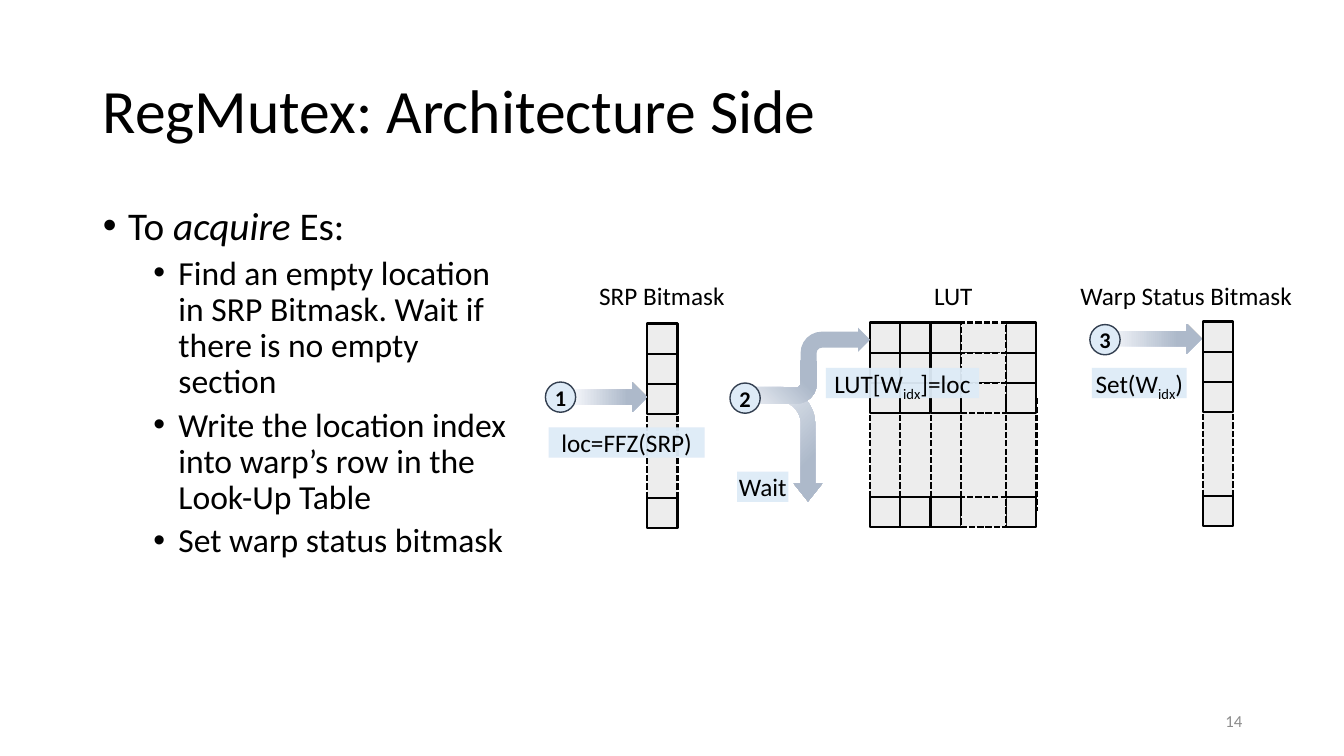
from lxml import etree
from pptx import Presentation
from pptx.dml.color import RGBColor
from pptx.enum import dml, shapes, text
from pptx.oxml.ns import qn
from pptx.util import Inches, Pt

FONT = "Calibri"
BLACK = RGBColor(0x00, 0x00, 0x00)
GRAY = RGBColor(0x8C, 0x8C, 0x8C)
CELL_FILL = RGBColor(0xED, 0xED, 0xED)
ARROW_LIGHT = RGBColor(0xF6, 0xF8, 0xFC)
ARROW_DARK = RGBColor(0xAD, 0xB9, 0xCA)
LABEL_FILL = RGBColor(0xDE, 0xEB, 0xF7)
STEP_LINE = RGBColor(0x33, 0x3F, 0x50)
SHAPE = shapes.MSO_SHAPE
CELL = 0.3
CELL_OFFSETS = (0, 0.3, 0.6, 1.73)


def inches(box):
    """Convert a box in inches to lengths."""
    return [Inches(v) for v in box]


def style(p, size, color=BLACK, align=text.PP_ALIGN.CENTER, bold=False):
    """Format a whole paragraph."""
    p.alignment = align
    p.font.name, p.font.size, p.font.bold = FONT, Pt(size), bold
    p.font.color.rgb = color


def add_runs(p, parts, mark):
    """Add text parts, passing every second run to mark."""
    for i, part in enumerate(parts):
        r = p.add_run()
        r.text = part
        if i % 2:
            mark(r)


def subscript(r):
    """Lower a run below the baseline."""
    r._r.get_or_add_rPr().set("baseline", "-25000")


def italic(r):
    """Set a run in italics."""
    r.font.italic = True


def add_shape(s, kind, box, fill):
    """Add a filled shape without shadow or outline."""
    sp = s.shapes.add_shape(kind, *inches(box))
    sp.shadow.inherit = False
    sp.line.fill.background()
    sp.fill.solid()
    sp.fill.fore_color.rgb = fill
    return sp


def outline(line, width, color=BLACK, dashed=False):
    """Set the colour, width and dash of a line."""
    line.color.rgb = color
    line.width = Pt(width)
    if dashed:
        line.dash_style = dml.MSO_LINE.SQUARE_DOT


def add_text(sp, parts, size, **kwargs):
    """Write one paragraph into a shape without margins."""
    tf = sp.text_frame
    tf.word_wrap = True
    tf.margin_left = tf.margin_right = tf.margin_top = tf.margin_bottom = 0
    p = tf.paragraphs[0]
    style(p, size, **kwargs)
    add_runs(p, parts, subscript)
    return tf


def add_title(s, box, title):
    """Fill the title placeholder."""
    sp = s.shapes.title
    sp.left, sp.top, sp.width, sp.height = inches(box)
    tf = sp.text_frame
    tf.text = title
    tf.vertical_anchor = text.MSO_ANCHOR.MIDDLE
    style(tf.paragraphs[0], 44, align=text.PP_ALIGN.LEFT)
    tf.paragraphs[0].line_spacing = 0.9


def add_bullets(s, box, items):
    """Fill the body placeholder with a two-level list."""
    sp = s.placeholders[1]
    sp.left, sp.top, sp.width, sp.height = inches(box)
    tf = sp.text_frame
    tf.auto_size = text.MSO_AUTO_SIZE.NONE
    for i, (level, parts) in enumerate(items):
        p = tf.add_paragraph() if i else tf.paragraphs[0]
        p.level = level
        style(p, 24 if level else 28, align=text.PP_ALIGN.LEFT)
        p.line_spacing = 0.9
        p.space_before = Pt(5 if level else 10)
        add_runs(p, parts, italic)
        pPr = p._p.get_or_add_pPr()
        pPr.set("marL", str(Inches(0.25 + 0.5 * level)))
        pPr.set("indent", str(Inches(-0.25)))
        bullet_font = etree.Element(qn("a:buFont"), typeface="Arial")
        bullet = etree.Element(qn("a:buChar"), char="•")
        at = pPr.index(pPr.find(qn("a:defRPr")))
        pPr[at:at] = [bullet_font, bullet]


def add_page_number(s, box, number):
    """Add the page number at the lower right."""
    tf = s.shapes.add_textbox(*inches(box)).text_frame
    tf.word_wrap = True
    tf.vertical_anchor = text.MSO_ANCHOR.MIDDLE
    tf.text = number
    style(tf.paragraphs[0], 12, GRAY, text.PP_ALIGN.RIGHT)


def add_column(s, x, y, width=CELL, dashed=False):
    """Draw a column of cells with an elided middle."""
    add_shape(s, SHAPE.RECTANGLE, (x, y + 0.75, width, 1.02), CELL_FILL)
    for dy in CELL_OFFSETS:
        cell = add_shape(s, SHAPE.RECTANGLE, (x, y + dy, width, CELL), CELL_FILL)
        outline(cell.line, 1.5, dashed=dashed)


def add_sides(s, x, y, offsets):
    """Draw the dashed sides of the elided middle."""
    for dx in offsets:
        ends = inches((x + dx, y + 0.75, x + dx, y + 1.87))
        side = s.shapes.add_connector(shapes.MSO_CONNECTOR.STRAIGHT, *ends)
        outline(side.line, 1.5, dashed=True)
        etree.SubElement(side._element.spPr, qn("a:effectLst"))


def add_bitmask(s, x, y):
    """Draw a bitmask of one column."""
    add_column(s, x, y)
    add_sides(s, x, y, (0, CELL))


def add_lut(s, x, y):
    """Draw the look-up table, with its elided column on top."""
    for dx in (0, 0.3, 0.6, 1.35):
        add_column(s, x + dx, y)
    add_column(s, x + 0.9, y, 0.45, dashed=True)
    add_sides(s, x, y, (0, 0.3, 0.6, 0.9, 1.35, 1.65))


def add_heading(s, box, heading):
    """Add a heading above a structure."""
    add_text(s.shapes.add_textbox(*inches(box)), [heading], 18)


def add_arrow(s, kind, box, angle=None, rotation=0, adjust=()):
    """Add a block arrow, shaded along the angle if one is given."""
    sp = add_shape(s, kind, box, ARROW_DARK)
    sp.rotation = rotation
    for i, value in enumerate(adjust):
        sp.adjustments[i] = value
    if angle is not None:
        sp.fill.gradient()
        sp.fill.gradient_angle = angle
        stops = zip(sp.fill.gradient_stops, (0, 0.74), (ARROW_LIGHT, ARROW_DARK))
        for stop, position, color in stops:
            stop.position = position
            stop.color.rgb = color


def add_step(s, x, y, number):
    """Add a numbered step circle."""
    sp = add_shape(s, SHAPE.OVAL, (x, y, CELL, CELL), LABEL_FILL)
    outline(sp.line, 1, STEP_LINE)
    tf = add_text(sp, [number], 16, bold=True)
    tf.vertical_anchor = text.MSO_ANCHOR.MIDDLE


def add_label(s, box, parts):
    """Add a slightly transparent operation label."""
    sp = add_shape(s, SHAPE.RECTANGLE, box, LABEL_FILL)
    color = sp._element.spPr.find(qn("a:solidFill"))[0]
    etree.SubElement(color, qn("a:alpha"), val="95000")
    add_text(sp, parts, 18).vertical_anchor = text.MSO_ANCHOR.TOP


def add_diagram(s, x, y):
    """Draw the bitmasks, the look-up table and the three steps."""
    bent = SHAPE.BENT_ARROW
    add_arrow(s, bent, (x + 1.75, y + 1.2, 1.14, 0.85), 45, 90,
              (0.166, 0.166, 0.208, 0.438))
    add_bitmask(s, x + 1.01, y + 0.43)
    add_bitmask(s, x + 6.52, y + 0.41)
    add_lut(s, x + 3.22, y + 0.42)
    for dx, width, heading in ((0.12, 2.07, "SRP Bitmask"), (3.58, 0.93, "LUT"),
                               (5.15, 2.41, "Warp Status Bitmask")):
        add_heading(s, (x + dx, y, width, CELL), heading)
    add_arrow(s, SHAPE.RIGHT_ARROW, (x + 0.26, y + 1.01, 0.75, CELL), 0)
    add_arrow(s, SHAPE.RIGHT_ARROW, (x + 5.58, y + 0.43, 0.93, CELL), 0)
    add_arrow(s, bent, (x + 1.9, y + 0.8, 0.79, 0.46), 225, 180,
              (0.35, 0.25, 0, 0.438))
    add_arrow(s, bent, (x + 2.53, y + 0.47, 0.69, 0.48),
              adjust=(0.332, 0.25, 0.25, 0.438))
    for dx, dy, number in ((0, 1.01, "1"), (1.83, 1.02, "2"), (5.4, 0.44, "3")):
        add_step(s, x + dx, y + dy, number)
    for dx, dy, width, parts in ((0.03, 1.46, 1.55, ["loc=FFZ(SRP)"]),
                                 (5.42, 0.87, 0.94, ["Set(W", "idx", ")"]),
                                 (2.78, 0.87, 1.52, ["LUT[W", "idx", "]=loc"]),
                                 (1.9, 1.9, 0.51, ["Wait"])):
        add_label(s, (x + dx, y + dy, width, CELL), parts)


def main():
    """Build and save the slide."""
    prs = Presentation()
    prs.slide_width, prs.slide_height = Inches(13.33), Inches(7.5)
    s = prs.slides.add_slide(prs.slide_layouts[1])
    add_title(s, (0.92, 0.4, 11.5, 1.45), "RegMutex: Architecture Side")
    add_bullets(s, (0.92, 2, 4.26, 4.76), (
        (0, ["To ", "acquire", " Es:"]),
        (1, ["Find an empty location in SRP Bitmask. Wait if there is no empty section"]),
        (1, ["Write the location index into warp’s row in the Look-Up Table"]),
        (1, ["Set warp status bitmask"])))
    add_page_number(s, (9.42, 6.95, 3, 0.4), "14")
    add_diagram(s, 5.41, 2.78)
    prs.save("out.pptx")


if __name__ == "__main__":
    main()
